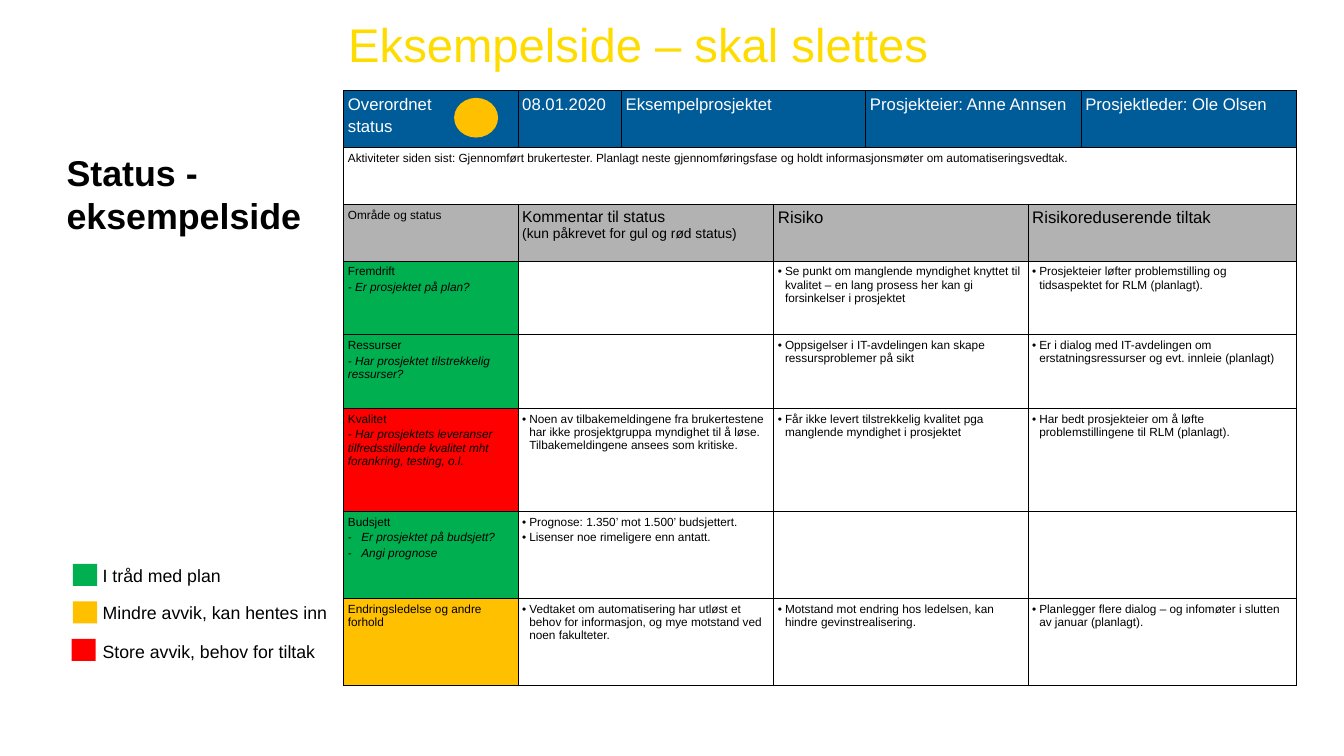
from dataclasses import dataclass
from typing import Optional, Sequence

from lxml import etree
from pptx import Presentation, util as u
from pptx.dml.color import RGBColor
from pptx.enum import shapes, text
from pptx.oxml import ns

WIDTH, HEIGHT = u.Pt(1366), u.Pt(767.88)
FONT = "Arial"
BLACK = RGBColor(0x00, 0x00, 0x00)
WHITE = RGBColor(0xFF, 0xFF, 0xFF)
YELLOW = RGBColor(0xFF, 0xDC, 0x00)
BLUE = RGBColor(0x00, 0x5B, 0x99)
GREY = RGBColor(0xB2, 0xB2, 0xB2)
ON_PLAN = RGBColor(0x00, 0xB0, 0x50)
MINOR = RGBColor(0xFF, 0xC0, 0x00)
MAJOR = RGBColor(0xFF, 0x00, 0x00)

# Shares of the slide's width and height, in percent
COLUMNS = [12.97, 7.7, 11.33, 6.85, 12.07, 3.95, 16.03]
ROWS = [7.5, 7.5, 7.5, 9.76, 9.76, 13.6, 11.54, 11.54]
TABLE_LEFT, TABLE_TOP = 25.57, 12.01
CELL_MARGIN = u.Inches(0.06)


@dataclass
class Line:
    words: str
    size: float = 12
    color: RGBColor = BLACK
    bold: bool = False
    italic: bool = False
    bullet: str = ""
    indent: float = 0.1
    gap: float = 0.2  # space before, as a share of the text size


@dataclass
class Cell:
    lines: Sequence[Line] = ()
    fill: RGBColor = WHITE
    span: int = 2


@dataclass
class Status:
    label: str
    color: RGBColor
    left: float
    top: float
    label_top: float


def across(share: float) -> int:
    return round(WIDTH * share / 100)


def down(share: float) -> int:
    return round(HEIGHT * share / 100)


def area(left: float, top: float, width: float, height: float) -> tuple[int, int, int, int]:
    return across(left), down(top), across(width), down(height)


def write(frame, lines: Sequence[Line], align: Optional[text.PP_ALIGN] = None) -> None:
    for number, line in enumerate(lines):
        paragraph = frame.add_paragraph() if number else frame.paragraphs[0]
        if line.bullet:
            props = paragraph._p.get_or_add_pPr()
            props.set("marL", str(u.Inches(line.indent)))
            props.set("indent", str(-u.Inches(line.indent)))
            etree.SubElement(props, ns.qn("a:buFont"), typeface=FONT)
            etree.SubElement(props, ns.qn("a:buChar"), char=line.bullet)
        if align is not None:
            paragraph.alignment = align
        paragraph.space_before = u.Pt(line.size * line.gap if number else 0)
        run = paragraph.add_run()
        run.text = line.words
        font = run.font
        font.name, font.size = FONT, u.Pt(line.size)
        font.bold, font.italic = line.bold, line.italic
        font.color.rgb = line.color


def add_text(slide, place: tuple[int, int, int, int], lines: Sequence[Line]) -> None:
    frame = slide.shapes.add_textbox(*place).text_frame
    frame.word_wrap = True
    write(frame, lines)


def add_mark(slide, kind: shapes.MSO_SHAPE, place: tuple[int, int, int, int], color: RGBColor) -> None:
    mark = slide.shapes.add_shape(kind, *place)
    mark.shadow.inherit = False
    mark.fill.solid()
    mark.fill.fore_color.rgb = color
    mark.line.fill.background()


def add_borders(cell) -> None:
    props = cell._tc.get_or_add_tcPr()
    for side in ("lnL", "lnR", "lnT", "lnB"):
        border = etree.SubElement(props, ns.qn(f"a:{side}"), w=str(u.Pt(0.75)))
        fill = etree.SubElement(border, ns.qn("a:solidFill"))
        etree.SubElement(fill, ns.qn("a:srgbClr"), val=str(BLACK))


def add_report(slide, report: Sequence[Sequence[Cell]]) -> None:
    place = area(TABLE_LEFT, TABLE_TOP, sum(COLUMNS), sum(ROWS))
    table = slide.shapes.add_table(len(ROWS), len(COLUMNS), *place).table
    table.first_row = table.horz_banding = False
    for column, share in zip(table.columns, COLUMNS):
        column.width = across(share)
    for row, share in zip(table.rows, ROWS):
        row.height = down(share)
    for row_number, cells in enumerate(report):
        start = 0
        for content in cells:
            end = start + content.span
            for position in range(start, end):
                cell = table.cell(row_number, position)
                add_borders(cell)
                cell.fill.solid()
                cell.fill.fore_color.rgb = content.fill
            cell = table.cell(row_number, start)
            if content.span > 1:
                cell.merge(table.cell(row_number, end - 1))
            cell.margin_left = cell.margin_right = CELL_MARGIN
            cell.margin_top = cell.margin_bottom = CELL_MARGIN
            write(cell.text_frame, content.lines)
            start = end


def banner(*lines: str, span: int = 1) -> Cell:
    return Cell([Line(words, 17, WHITE) for words in lines], BLUE, span)


def heading(*lines: Line, span: int = 2) -> Cell:
    return Cell(lines, GREY, span)


def topic(name: str, color: RGBColor, *questions: Line) -> Cell:
    return Cell([Line(name), *questions], color, 1)


def question(words: str, bullet: str = "") -> Line:
    return Line(words, italic=True, bullet=bullet, indent=0.19)


def points(*lines: str) -> Cell:
    return Cell([Line(words, bullet="•") for words in lines])


REPORT = [
    [banner("Overordnet", "status"), banner("08.01.2020"), banner("Eksempelprosjektet", span=2),
     banner("Prosjekteier: Anne Annsen", span=2), banner("Prosjektleder: Ole Olsen")],
    [Cell([Line("Aktiviteter siden sist: Gjennomført brukertester. Planlagt neste gjennomføringsfase "
                "og holdt informasjonsmøter om automatiseringsvedtak.")], span=len(COLUMNS))],
    [heading(Line("Område og status"), span=1),
     heading(Line("Kommentar til status", 16),
             Line("(kun påkrevet for gul og rød status)", 14, gap=0)),
     heading(Line("Risiko", 17)), heading(Line("Risikoreduserende tiltak", 17))],
    [topic("Fremdrift", ON_PLAN, question("- Er prosjektet på plan?")),
     points(),
     points("Se punkt om manglende myndighet knyttet til kvalitet – en lang prosess her "
            "kan gi forsinkelser i prosjektet"),
     points("Prosjekteier løfter problemstilling og tidsaspektet for RLM (planlagt).")],
    [topic("Ressurser", ON_PLAN, question("- Har prosjektet tilstrekkelig ressurser?")),
     points(),
     points("Oppsigelser i IT-avdelingen kan skape ressursproblemer på sikt"),
     points("Er i dialog med IT-avdelingen om erstatningsressurser og evt. innleie (planlagt)")],
    [topic("Kvalitet", MAJOR, question("- Har prosjektets leveranser tilfredsstillende kvalitet "
                                       "mht forankring, testing, o.l.")),
     points("Noen av tilbakemeldingene fra brukertestene har ikke prosjektgruppa myndighet "
            "til å løse. Tilbakemeldingene ansees som kritiske."),
     points("Får ikke levert tilstrekkelig kvalitet pga manglende myndighet i prosjektet"),
     points("Har bedt prosjekteier om å løfte problemstillingene til RLM (planlagt).")],
    [topic("Budsjett", ON_PLAN, question("Er prosjektet på budsjett?", "-"),
           question("Angi prognose", "-")),
     points("Prognose: 1.350’ mot 1.500’ budsjettert.", "Lisenser noe rimeligere enn antatt."),
     points(), points()],
    [topic("Endringsledelse og andre forhold", MINOR),
     points("Vedtaket om automatisering har utløst et behov for informasjon, "
            "og mye motstand ved noen fakulteter."),
     points("Motstand mot endring hos ledelsen, kan hindre gevinstrealisering."),
     points("Planlegger flere dialog – og infomøter i slutten av januar (planlagt).")],
]

LEGEND = [
    Status("I tråd med plan", ON_PLAN, 5.43, 74.58, 74.2),
    Status("Mindre avvik, kan hentes inn", MINOR, 5.43, 79.55, 79.08),
    Status("Store avvik, behov for tiltak", MAJOR, 5.32, 84.52, 84.33),
]


def main() -> None:
    deck = Presentation()
    deck.slide_width = WIDTH
    deck.slide_height = HEIGHT
    slide = deck.slides.add_slide(deck.slide_layouts[5])

    title = slide.shapes.title
    title.left, title.top, title.width, title.height = area(25.14, 1.5, 44.7, 8.54)
    title.text_frame.auto_size = text.MSO_AUTO_SIZE.NONE
    title.text_frame.word_wrap = False
    title.text_frame.vertical_anchor = text.MSO_ANCHOR.TOP
    write(title.text_frame, [Line("Eksempelside – skal slettes", 48, YELLOW)], text.PP_ALIGN.CENTER)

    add_text(slide, area(4.43, 19.42, 19.5, 18.2),
             [Line(words, 36.4, bold=True, gap=0) for words in ("Status -", "eksempelside")])
    add_report(slide, REPORT)
    add_mark(slide, shapes.MSO_SHAPE.OVAL, area(33.79, 12.95, 3.27, 5.25), MINOR)
    for status in LEGEND:
        add_mark(slide, shapes.MSO_SHAPE.RECTANGLE, area(status.left, status.top, 1.79, 2.91), status.color)
        add_text(slide, area(7.12, status.label_top, 19.5, 3.75), [Line(status.label, 18)])
    deck.save("out.pptx")


if __name__ == "__main__":
    main()
